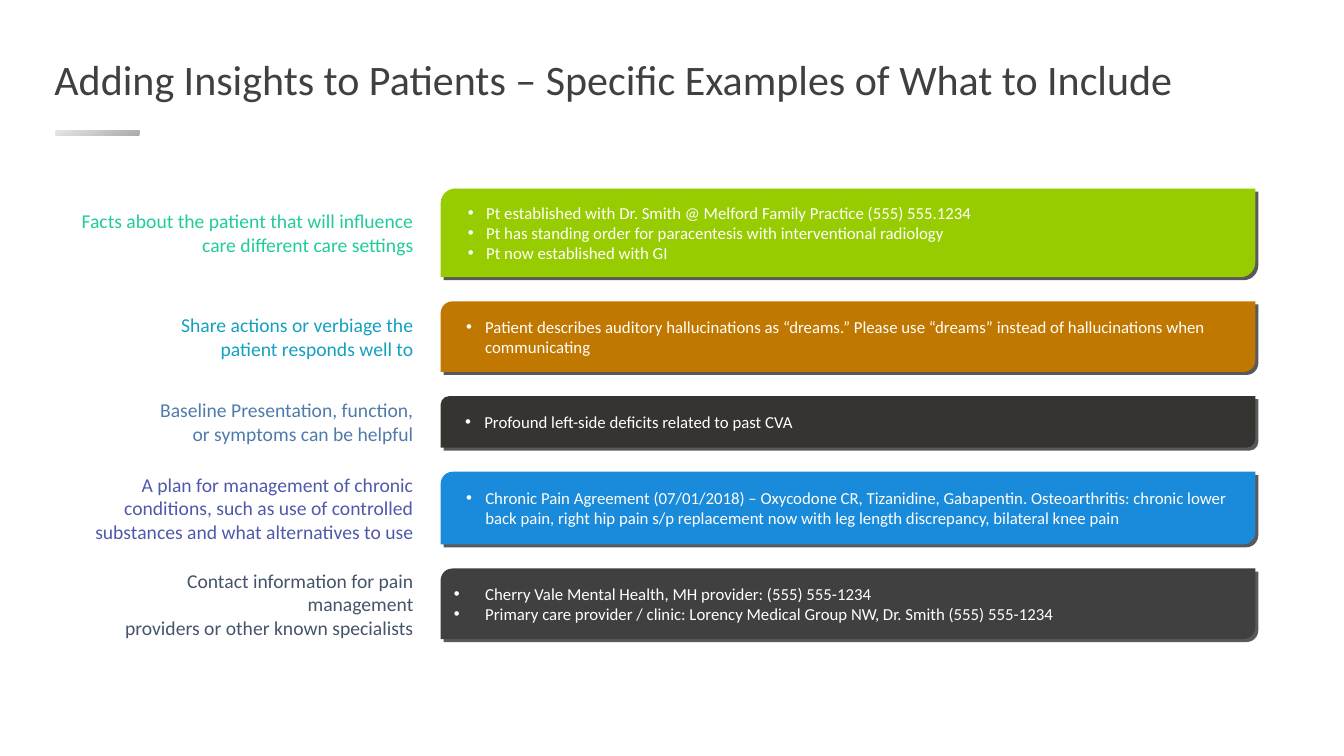
from dataclasses import dataclass

from lxml.etree import SubElement
from pptx import Presentation
from pptx.dml.color import RGBColor
from pptx.enum.shapes import MSO_SHAPE as Preset
from pptx.enum.text import MSO_ANCHOR as Anchor, MSO_AUTO_SIZE as AutoSize, PP_ALIGN as Align
from pptx.oxml.ns import qn
from pptx.util import Inches, Pt


@dataclass(frozen=True)
class Theme:
    """Colours, font and type sizes of the slide."""
    font: str = "Calibri"
    title_size: int = 30
    label_size: int = 14
    card_size: int = 12
    title: str = "404041"
    card_text: str = "FFFFFF"
    shadow: str = "58595B"
    bar_start: str = "E7E6E6"
    bar_end: str = "AFABAB"


@dataclass(frozen=True)
class Box:
    """A rectangle in inches."""
    left: float
    top: float
    width: float
    height: float

    def lengths(self):
        """Return the four sides as slide lengths."""
        return [Inches(side) for side in (self.left, self.top, self.width, self.height)]


@dataclass(frozen=True)
class Row:
    """One kind of insight: its label and its card of examples."""
    height: float
    label: str
    label_color: str
    card_color: str
    examples: tuple
    hanging: float = 0.19


THEME = Theme()
TITLE = "Adding Insights to Patients – Specific Examples of What to Include"
ROWS = [
    Row(0.88, "Facts about the patient that will influence\vcare different care settings",
        "21CB9C", "97CC00",
        ("Pt established with Dr. Smith @ Melford Family Practice (555) 555.1234",
         "Pt has standing order for paracentesis with interventional radiology",
         "Pt now established with GI"), 0.18),
    Row(0.7, "Share actions or verbiage the\vpatient responds well to",
        "14A0C0", "C17800",
        ("Patient describes auditory hallucinations as “dreams.” Please use “dreams” "
         "instead of hallucinations when communicating",)),
    Row(0.51, "Baseline Presentation, function,\vor symptoms can be helpful",
        "4F7BAC", "353431",
        ("Profound left-side deficits related to past CVA",)),
    Row(0.72, "A plan for management of chronic conditions, such as use of controlled "
        "substances and what alternatives to use",
        "5059AB", "198BDA",
        ("Chronic Pain Agreement (07/01/2018) – Oxycodone CR, Tizanidine, Gabapentin. "
         "Osteoarthritis: chronic lower back pain, right hip pain s/p replacement now "
         "with leg length discrepancy, bilateral knee pain",)),
    Row(0.7, "Contact information for pain management\vproviders or other known specialists",
        "455469", "404041",
        ("Cherry Vale Mental Health, MH provider: (555) 555-1234",
         "Primary care provider / clinic: Lorency Medical Group NW, Dr. Smith (555) 555-1234"),
        0.31),
]


def format_text(text_frame, size, color, alignment):
    """Wrap and centre the text vertically and style every run."""
    text_frame.word_wrap = True
    text_frame.auto_size = AutoSize.NONE
    text_frame.vertical_anchor = Anchor.MIDDLE
    for paragraph in text_frame.paragraphs:
        paragraph.alignment = alignment
        for run in paragraph.runs:
            run.font.name = THEME.font
            run.font.size = Pt(size)
            run.font.color.rgb = RGBColor.from_string(color)


def add_bullet(paragraph, hanging):
    """Give a paragraph a round bullet with a hanging indent."""
    properties = paragraph._p.get_or_add_pPr()
    properties.set("marL", str(Inches(0.31)))
    properties.set("indent", str(-Inches(hanging)))
    SubElement(properties, qn("a:buFont")).set("typeface", "Arial")
    SubElement(properties, qn("a:buChar")).set("char", "•")


def add_plain_shape(slide, preset, box):
    """Add a preset shape without line or effect."""
    shape = slide.shapes.add_shape(preset, *box.lengths())
    shape.shadow.inherit = False
    shape.line.fill.background()
    return shape


def add_panel(slide, box, color):
    """Add a solid panel with two rounded corners."""
    panel = add_plain_shape(slide, Preset.ROUND_2_DIAG_RECTANGLE, box)
    panel.fill.solid()
    panel.fill.fore_color.rgb = RGBColor.from_string(color)
    return panel


def add_header(slide, box):
    """Place the title and the short gradient bar below it."""
    title = slide.shapes.title
    title.left, title.top, title.width, title.height = box.lengths()
    title.text_frame.text = TITLE
    title.text_frame.margin_top = title.text_frame.margin_bottom = 0
    title.text_frame.paragraphs[0].line_spacing = 0.9
    format_text(title.text_frame, THEME.title_size, THEME.title, Align.LEFT)

    bar_box = Box(box.left + 0.11, box.top + 0.77, 0.83, 0.05)
    bar = add_plain_shape(slide, Preset.RECTANGLE, bar_box)
    bar.fill.gradient()
    bar.fill.gradient_angle = 300
    for stop, color in zip(bar.fill.gradient_stops, (THEME.bar_start, THEME.bar_end)):
        stop.color.rgb = RGBColor.from_string(color)


def add_label(slide, box, row):
    """Write the row's label against the right edge of the box."""
    label = slide.shapes.add_textbox(*box.lengths())
    label.text_frame.text = row.label
    format_text(label.text_frame, THEME.label_size, row.label_color, Align.RIGHT)


def add_card(slide, box, row):
    """Place the bulleted examples on a panel with an offset shadow panel."""
    offset = 0.03
    shadow_box = Box(box.left + offset, box.top + offset, box.width, box.height)
    add_panel(slide, shadow_box, THEME.shadow)
    card = add_panel(slide, box, row.card_color)
    card.text_frame.text = "\n".join(row.examples)
    format_text(card.text_frame, THEME.card_size, THEME.card_text, Align.LEFT)
    for paragraph in card.text_frame.paragraphs:
        add_bullet(paragraph, row.hanging)


def add_rows(slide, box):
    """Stack the rows with equal gaps, labels left and cards right."""
    label_width, card_width, gap = 3.52, 8.08, 0.24
    card_left = box.left + box.width - card_width
    top = box.top
    for row in ROWS:
        add_label(slide, Box(box.left, top, label_width, row.height), row)
        add_card(slide, Box(card_left, top, card_width, row.height), row)
        top += row.height + gap


def main():
    """Build and save the presentation."""
    presentation = Presentation()
    presentation.slide_width = Inches(13.33)
    presentation.slide_height = Inches(7.5)
    title_only = presentation.slide_layouts[5]
    slide = presentation.slides.add_slide(title_only)
    add_header(slide, Box(0.44, 0.52, 12.46, 0.58))
    add_rows(slide, Box(0.68, 1.87, 11.77, 4.48))
    presentation.save("out.pptx")


if __name__ == "__main__":
    main()
